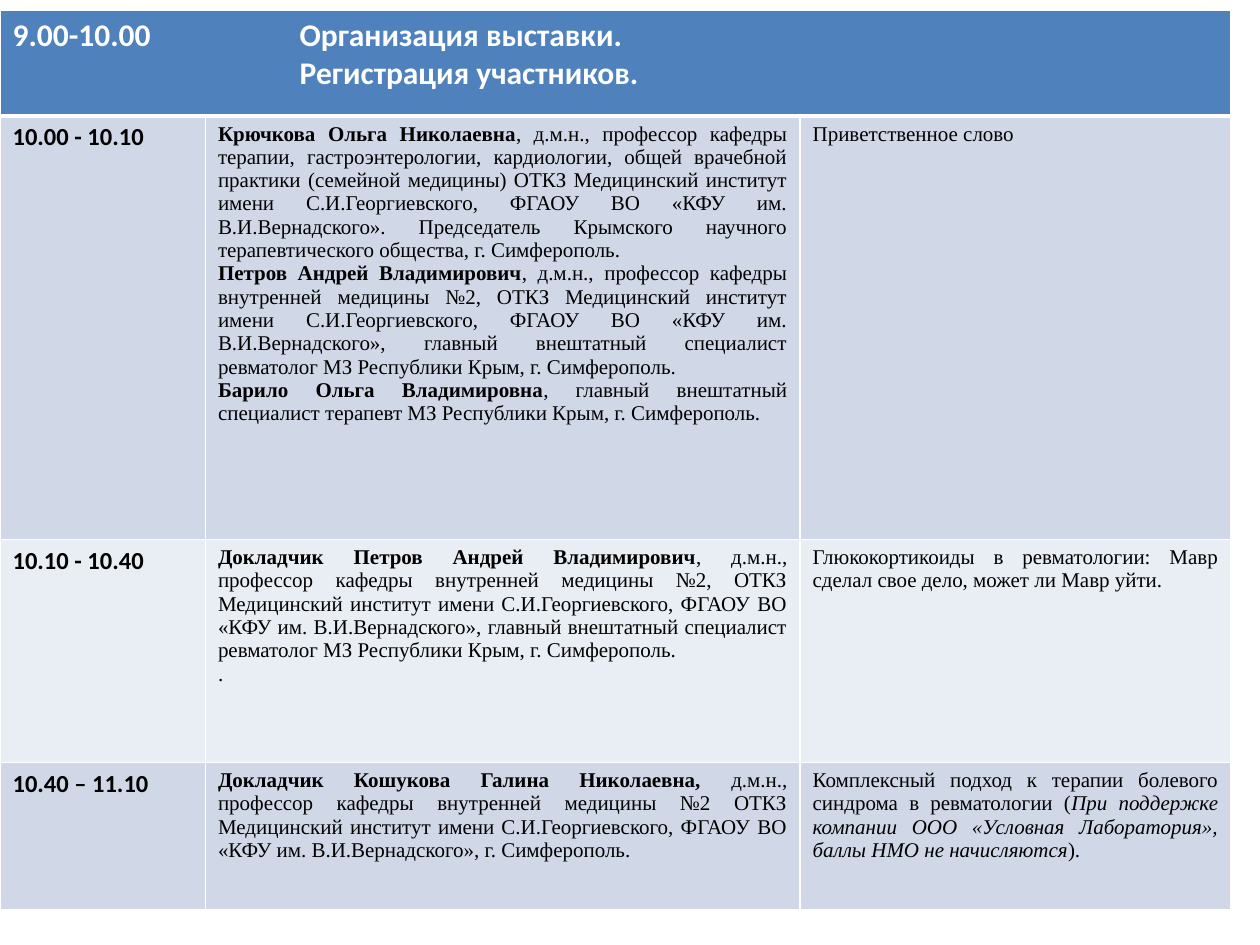
from lxml.etree import SubElement
from pptx import Presentation
from pptx.dml.color import RGBColor
from pptx.enum.text import PP_ALIGN
from pptx.oxml.ns import qn
from pptx.util import Pt

WHITE, BLACK = "FFFFFF", "000000"
HEADER_FILL, BAND_FILLS = "4F81BD", ("D0D8E8", "E9EDF4")
COLUMN_WIDTHS = (117.4, 339.8, 246.2)
ROW_HEIGHTS = (60.5, 242, 127.5, 84)
HEADER_INDENT = 164

INSTITUTE = "ОТКЗ Медицинский институт имени С.И.Георгиевского, ФГАОУ ВО «КФУ им. В.И.Вернадского»"
CITY = "г. Симферополь."
PETROV_POST = (
    f", д.м.н., профессор кафедры внутренней медицины №2, {INSTITUTE}, "
    f"главный внештатный специалист ревматолог МЗ Республики Крым, {CITY}"
)

SESSIONS = [
    (
        "10.00 - 10.10",
        [
            [("Крючкова Ольга Николаевна", "bold"),
             (", д.м.н., профессор кафедры терапии, гастроэнтерологии, кардиологии, общей врачебной "
              f"практики (семейной медицины) {INSTITUTE}. "
              f"Председатель Крымского научного терапевтического общества, {CITY}", "plain")],
            [("Петров Андрей Владимирович", "bold"), (PETROV_POST, "plain")],
            [("Барило Ольга Владимировна", "bold"),
             (f", главный внештатный специалист терапевт МЗ Республики Крым, {CITY}", "plain")],
        ],
        [[("Приветственное слово", "plain")]],
    ),
    (
        "10.10 - 10.40",
        [
            [("Докладчик Петров Андрей Владимирович", "bold"), (PETROV_POST, "plain")],
            [(".", "plain")],
        ],
        [[("Глюкокортикоиды в ревматологии: Мавр сделал свое дело, может ли Мавр уйти.", "plain")]],
    ),
    (
        "10.40 – 11.10",
        [
            [("Докладчик Кошукова Галина Николаевна, ", "bold"),
             (f"д.м.н., профессор кафедры внутренней медицины №2 {INSTITUTE}, {CITY}", "plain")],
        ],
        [
            [("Комплексный подход к терапии болевого синдрома в ревматологии (", "plain"),
             ("При поддержке компании ООО «Условная Лаборатория», баллы НМО не начисляются", "italic"),
             (").", "plain")],
        ],
    ),
]


def color(value):
    """Turn a hex string into a colour."""
    return RGBColor.from_string(value)


def style_cell(cell, fill, bottom_width=1):
    """Give a cell white borders and a solid fill."""
    properties = cell._tc.get_or_add_tcPr()
    for side, width in (("L", 1), ("R", 1), ("T", 1), ("B", bottom_width)):
        line = SubElement(properties, qn(f"a:ln{side}"), w=str(Pt(width)))
        SubElement(SubElement(line, qn("a:solidFill")), qn("a:srgbClr"), val=WHITE)
    cell.fill.solid()
    cell.fill.fore_color.rgb = color(fill)


def write_cell(cell, paragraphs, font_name, size, text_color, alignment):
    """Write paragraphs of (text, style) spans into a cell."""
    frame = cell.text_frame
    for index, spans in enumerate(paragraphs):
        para = frame.add_paragraph() if index else frame.paragraphs[0]
        para.alignment = alignment
        para.font.name = font_name
        para.font.size = Pt(size)
        para.font.color.rgb = color(text_color)
        for text, style in spans:
            span = para.add_run()
            span.text = text
            span.font.bold = style == "bold"
            span.font.italic = style == "italic"


def fill_header(table):
    """Fill the merged top row, its lines sharing one hanging indent."""
    for cell in table.rows[0].cells:
        style_cell(cell, HEADER_FILL, bottom_width=3)
    header = table.cell(0, 0)
    header.merge(table.cell(0, len(COLUMN_WIDTHS) - 1))
    lines = ["9.00-10.00\tОрганизация выставки.", "Регистрация участников."]
    write_cell(header, [[(line, "bold")] for line in lines], "Calibri", 18, WHITE, PP_ALIGN.JUSTIFY)
    for para, indent in zip(header.text_frame.paragraphs, (-HEADER_INDENT, 0)):
        properties = para._p.get_or_add_pPr()
        properties.set("marL", str(Pt(HEADER_INDENT)))
        properties.set("indent", str(Pt(indent)))


def fill_session(table, row, session):
    """Fill one row with the time, the speakers and the topic."""
    time, speakers, topic = session
    cells = list(table.rows[row].cells)
    for cell in cells:
        style_cell(cell, BAND_FILLS[(row - 1) % 2])
    write_cell(cells[0], [[(time, "bold")]], "Calibri", 14, BLACK, PP_ALIGN.LEFT)
    for cell, paragraphs in zip(cells[1:], (speakers, topic)):
        write_cell(cell, paragraphs, "Times New Roman", 12, BLACK, PP_ALIGN.JUSTIFY)


def add_schedule(page, left, top):
    """Place the programme table with its corner at the given point."""
    table = page.shapes.add_table(
        len(ROW_HEIGHTS), len(COLUMN_WIDTHS), Pt(left), Pt(top),
        Pt(sum(COLUMN_WIDTHS)), Pt(sum(ROW_HEIGHTS)),
    ).table
    for column, width in zip(table.columns, COLUMN_WIDTHS):
        column.width = Pt(width)
    for row, height in zip(table.rows, ROW_HEIGHTS):
        row.height = Pt(height)
    fill_header(table)
    for row, session in enumerate(SESSIONS, start=1):
        fill_session(table, row, session)


def main():
    """Build the programme page and save the deck."""
    deck = Presentation()
    deck.slide_width, deck.slide_height = Pt(720), Pt(540)
    page = deck.slides.add_slide(deck.slide_layouts[6])
    add_schedule(page, 0, 5.8)
    deck.save("out.pptx")


if __name__ == "__main__":
    main()
